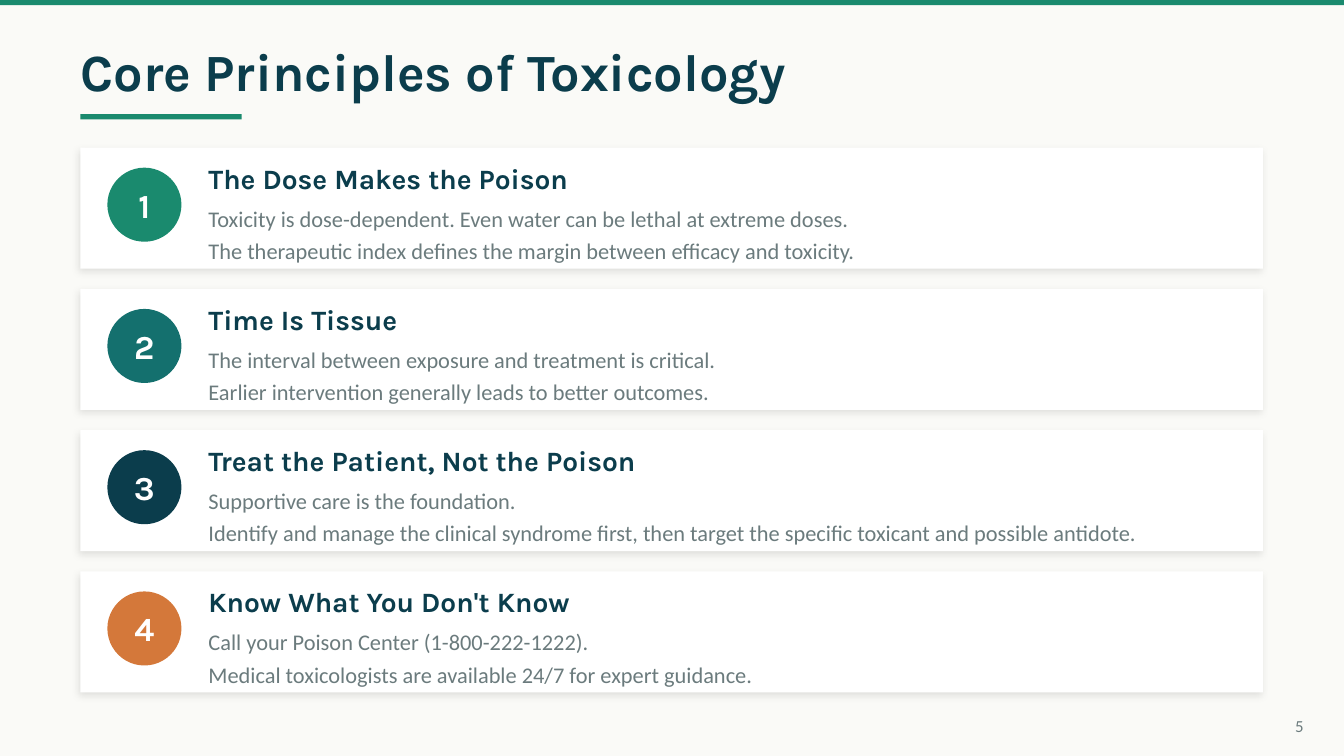
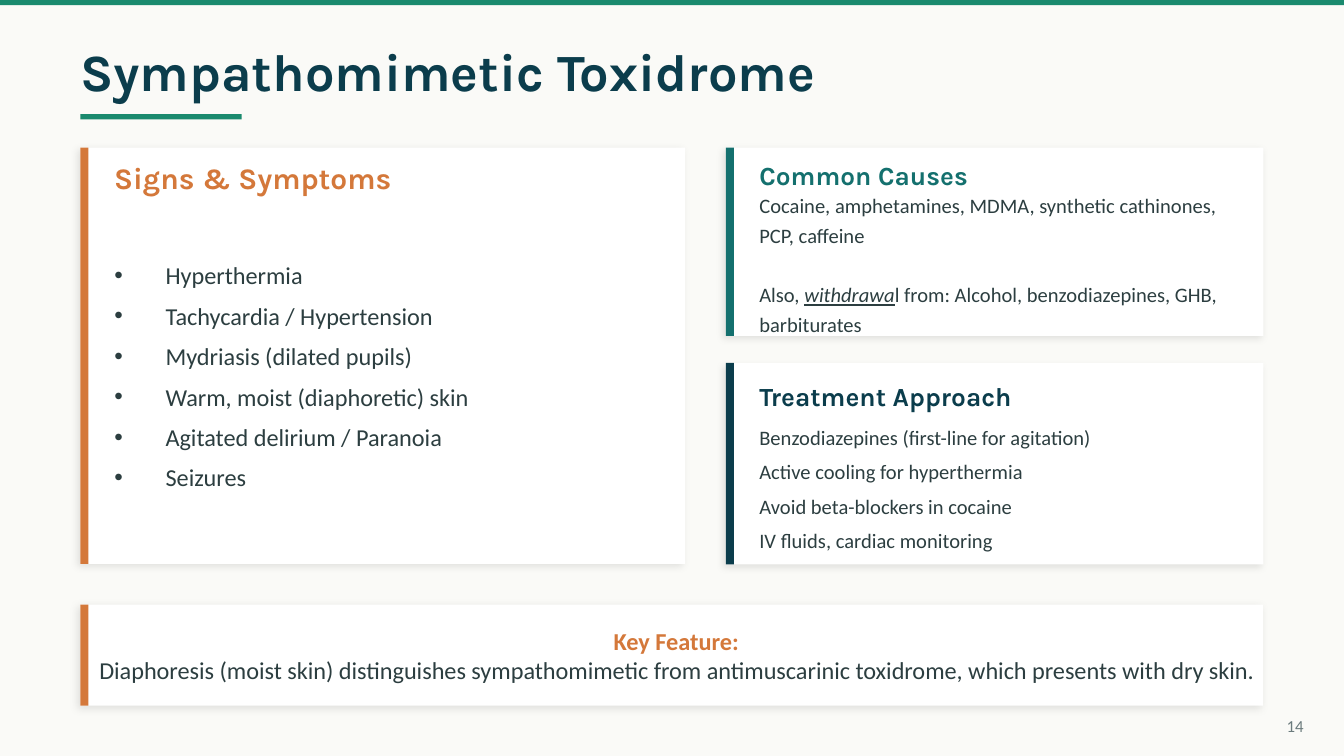
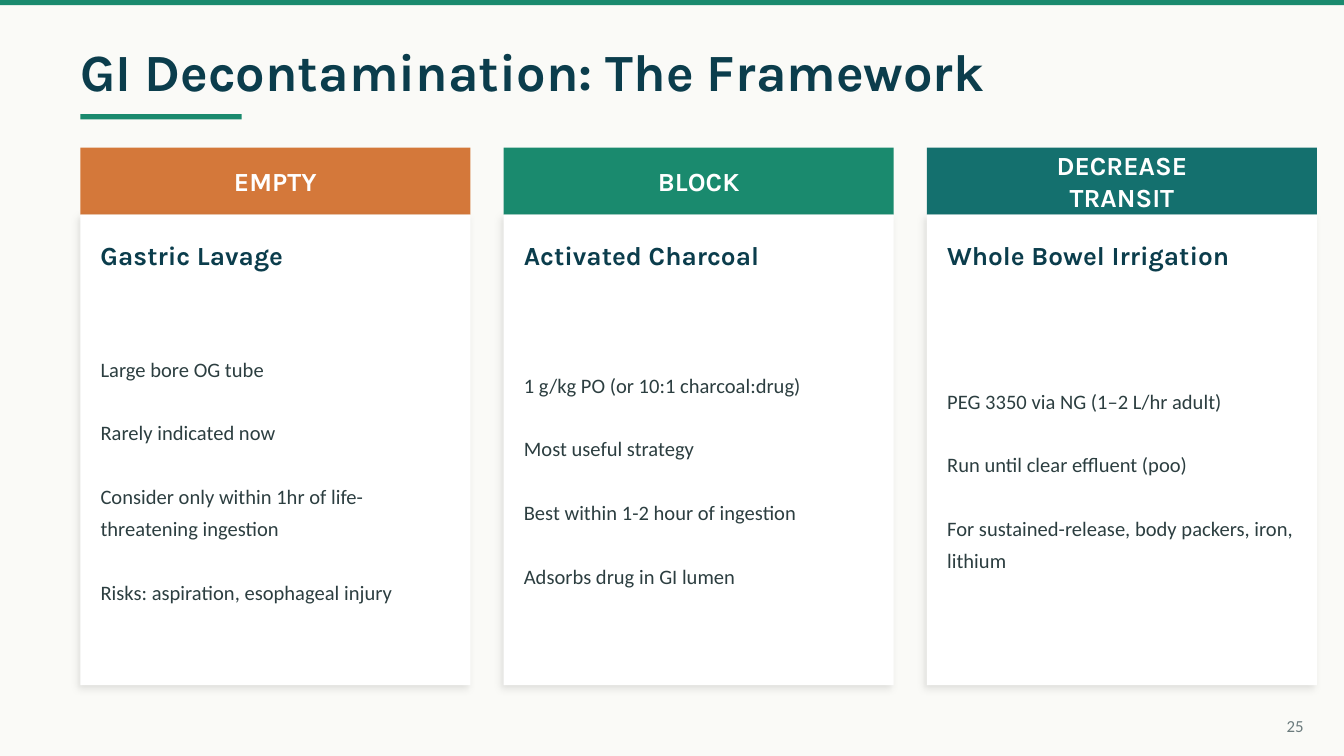
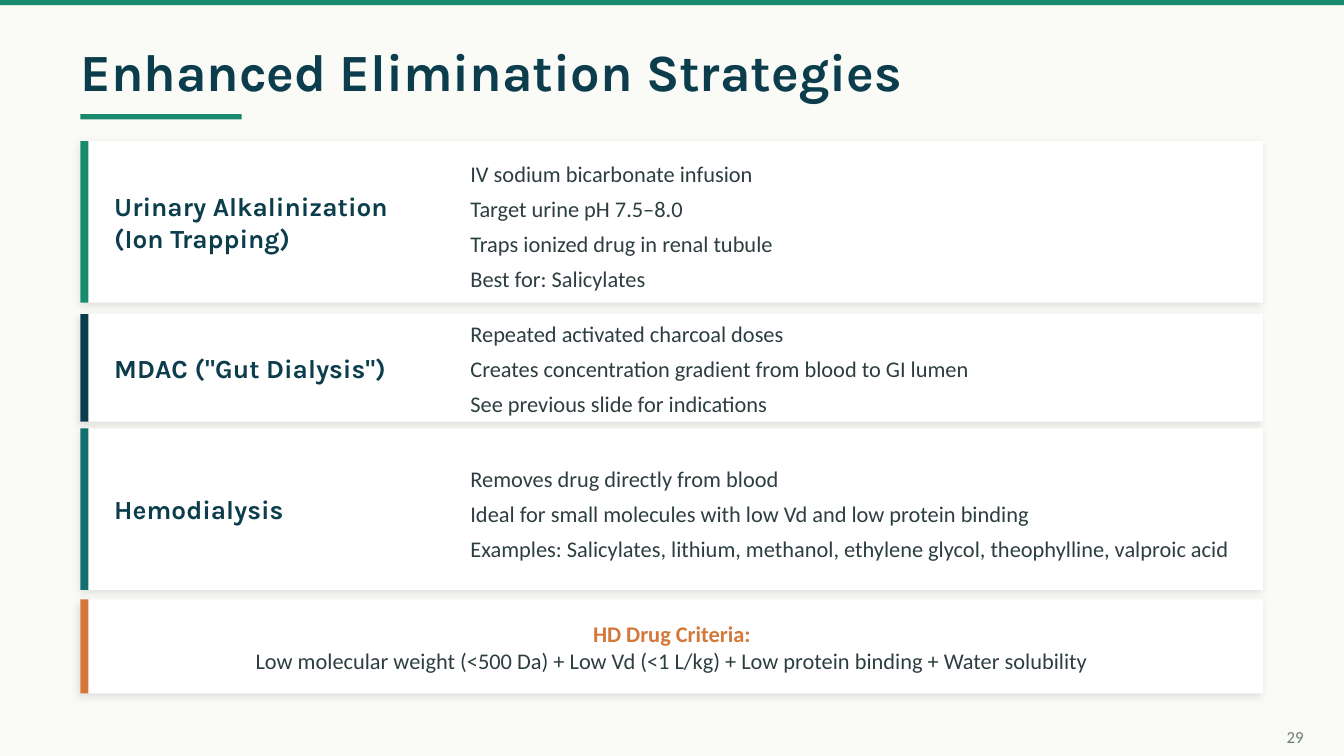
import pptx
import pptx.dml.color
import pptx.enum.shapes
import pptx.enum.text
import pptx.oxml.ns
import pptx.util
from lxml import etree

Cm = pptx.util.Cm
Pt = pptx.util.Pt
RGBColor = pptx.dml.color.RGBColor
Shape = pptx.enum.shapes.MSO_SHAPE
Align = pptx.enum.text.PP_ALIGN
qn = pptx.oxml.ns.qn

# Shared style; lengths are in centimetres, text sizes in points
CREAM = RGBColor(0xFA, 0xFA, 0xF7)
WHITE = RGBColor(0xFF, 0xFF, 0xFF)
GREEN = RGBColor(0x1A, 0x8A, 0x6E)
TEAL = RGBColor(0x14, 0x70, 0x6E)
NAVY = RGBColor(0x0B, 0x3D, 0x4C)
ORANGE = RGBColor(0xD4, 0x78, 0x3A)
INK = RGBColor(0x2C, 0x3E, 0x40)
GRAY = RGBColor(0x6B, 0x7B, 0x7D)
HEADING_FONT = "Karla"
BODY_FONT = "Calibri"
SLIDE_WIDTH, SLIDE_HEIGHT = 25.4, 14.29
MARGIN = 1.52
CONTENT_WIDTH = 22.35
CONTENT_TOP = 2.79
ACCENT_WIDTH = 0.15
COMPARISON_LAYOUT = 4  # a title and four body placeholders


# Text
def set_bullet(paragraph, bullet):
    properties = paragraph._p.get_or_add_pPr()
    indent = Cm(0.97) if bullet else 0
    properties.set("marL", str(indent))
    properties.set("indent", str(-indent))
    if bullet:
        etree.SubElement(properties, qn("a:buChar")).set("char", "•")
    else:
        etree.SubElement(properties, qn("a:buNone"))


def write_text(shape, paragraphs, size, color, font=BODY_FONT, bold=False,
               align=Align.LEFT, line=1.0, before=0, after=0, bullet=False):
    """Fill a shape; a paragraph is a string or a list of (text, emphasized) runs."""
    frame = shape.text_frame
    frame.word_wrap = True
    frame.auto_size = pptx.enum.text.MSO_AUTO_SIZE.NONE
    frame.vertical_anchor = pptx.enum.text.MSO_ANCHOR.MIDDLE
    frame.margin_left = frame.margin_right = frame.margin_top = frame.margin_bottom = 0
    for index, content in enumerate(paragraphs):
        paragraph = frame.add_paragraph() if index else frame.paragraphs[0]
        runs = [(content, False)] if isinstance(content, str) else content
        for text, emphasized in runs:
            run = paragraph.add_run()
            run.text = text
            if emphasized:
                run.font.italic = run.font.underline = True
        paragraph.alignment = align
        paragraph.line_spacing = line
        paragraph.space_before = Pt(before if index else 0)
        paragraph.space_after = Pt(after)
        set_bullet(paragraph, bullet)
        paragraph.font.name = font
        paragraph.font.size = Pt(size)
        paragraph.font.bold = bold
        paragraph.font.color.rgb = color


def place(shape, left, top, width, height):
    shape.left, shape.top = Cm(left), Cm(top)
    shape.width, shape.height = Cm(width), Cm(height)


def add_text(slide, left, top, width, height, paragraphs, size, color, **style):
    box = slide.shapes.add_textbox(Cm(left), Cm(top), Cm(width), Cm(height))
    write_text(box, paragraphs, size, color, **style)
    return box


def add_heading(slide, left, top, width, height, paragraphs, size, color=NAVY):
    add_text(slide, left, top, width, height, paragraphs, size, color,
             font=HEADING_FONT, bold=True)


def add_list(slide, number, left, top, width, height, items, size, color=INK, **style):
    """Use body placeholder 1 to 4 and bring it in front of its card."""
    body = slide.placeholders[number]
    place(body, left, top, width, height)
    write_text(body, items, size, color, **style)
    body.element.getparent().append(body.element)


# Shapes
def add_block(slide, kind, left, top, width, height, color):
    block = slide.shapes.add_shape(kind, Cm(left), Cm(top), Cm(width), Cm(height))
    block.shadow.inherit = False
    block.fill.solid()
    block.fill.fore_color.rgb = color
    block.line.fill.background()
    return block


def add_label(slide, kind, left, top, width, height, color, paragraphs, size):
    label = add_block(slide, kind, left, top, width, height, color)
    write_text(label, paragraphs, size, WHITE, font=HEADING_FONT, bold=True,
               align=Align.CENTER)


def add_card(slide, left, top, width, height, accent=None):
    card = add_block(slide, Shape.RECTANGLE, left, top, width, height, WHITE)
    effects = card.element.spPr.find(qn("a:effectLst"))
    shadow = etree.SubElement(effects, qn("a:outerShdw"), blurRad=str(Pt(4)),
                              dist=str(Pt(2)), dir=str(135 * 60000),
                              algn="bl", rotWithShape="0")
    black = etree.SubElement(shadow, qn("a:srgbClr"), val="000000")
    etree.SubElement(black, qn("a:alpha"), val="10000")
    if accent:
        add_block(slide, Shape.RECTANGLE, left, top, ACCENT_WIDTH, height, accent)


def add_callout(slide, top, height, text_area, lead, sentence, size):
    add_card(slide, MARGIN, top, CONTENT_WIDTH, height, ORANGE)
    box = add_text(slide, *text_area, [lead, sentence], size, INK, align=Align.CENTER)
    lead_font = box.text_frame.paragraphs[0].font
    lead_font.bold = True
    lead_font.color.rgb = ORANGE


# Frame that every slide shares
def add_slide(presentation, title, page, list_count, page_top=13.34):
    slide = presentation.slides.add_slide(presentation.slide_layouts[COMPARISON_LAYOUT])
    for placeholder in list(slide.placeholders):
        if placeholder.placeholder_format.idx > list_count:
            placeholder.element.getparent().remove(placeholder.element)
    add_block(slide, Shape.RECTANGLE, 0, 0, SLIDE_WIDTH, 0.1, GREEN)
    place(slide.shapes.title, MARGIN, 0.64, CONTENT_WIDTH, 1.4)
    write_text(slide.shapes.title, [title], 28, NAVY, font=HEADING_FONT, bold=True)
    add_block(slide, Shape.RECTANGLE, MARGIN, 2.16, 3.05, 0.1, GREEN)
    add_text(slide, 23.37, page_top, 1.27, 0.76, [str(page)], 9, GRAY, align=Align.RIGHT)
    return slide


# Slides
def build_principles(presentation):
    principles = [
        (GREEN, "The Dose Makes the Poison",
         ["Toxicity is dose-dependent. Even water can be lethal at extreme doses.",
          "The therapeutic index defines the margin between efficacy and toxicity."]),
        (TEAL, "Time Is Tissue",
         ["The interval between exposure and treatment is critical.",
          "Earlier intervention generally leads to better outcomes."]),
        (NAVY, "Treat the Patient, Not the Poison",
         ["Supportive care is the foundation.",
          "Identify and manage the clinical syndrome first, then target the specific "
          "toxicant and possible antidote."]),
        (ORANGE, "Know What You Don't Know",
         ["Call your Poison Center (1-800-222-1222).",
          "Medical toxicologists are available 24/7 for expert guidance."]),
    ]
    slide = add_slide(presentation, "Core Principles of Toxicology", 5, len(principles))
    for number, (color, heading, details) in enumerate(principles, 1):
        top = CONTENT_TOP + (number - 1) * 2.67
        add_card(slide, MARGIN, top, CONTENT_WIDTH, 2.29)
        add_label(slide, Shape.OVAL, 2.03, top + 0.38, 1.4, 1.4, color, [str(number)], 18)
        add_heading(slide, 3.94, top + 0.13, 19.05, 0.89, [heading], 15)
        add_list(slide, number, 3.94, top + 1.02, 19.05, 1.14, details, 12, GRAY, line=1.2)


def build_toxidrome(presentation):
    slide = add_slide(presentation, "Sympathomimetic Toxidrome", 14, 3)

    # Signs on the left
    add_card(slide, MARGIN, CONTENT_TOP, 11.43, 7.87, ORANGE)
    add_heading(slide, 2.16, 2.92, 10.16, 0.89, ["Signs & Symptoms"], 16, ORANGE)
    signs = ["Hyperthermia", "Tachycardia / Hypertension", "Mydriasis (dilated pupils)",
             "Warm, moist (diaphoretic) skin", "Agitated delirium / Paranoia", "Seizures"]
    add_list(slide, 1, 2.16, 4.19, 10.16, 5.84, signs, 13, after=6, bullet=True)

    # Causes and treatment on the right
    right, text_left, text_width = 13.72, 14.35, 8.89
    add_card(slide, right, CONTENT_TOP, 10.16, 3.56, TEAL)
    add_heading(slide, text_left, 2.92, text_width, 0.76, ["Common Causes"], 14, TEAL)
    causes = ["Cocaine, amphetamines, MDMA, synthetic cathinones, PCP, caffeine",
              [("Also, ", False), ("withdrawa", True),
               ("l from: Alcohol, benzodiazepines, GHB, barbiturates", False)]]
    add_list(slide, 2, text_left, 3.94, text_width, 2.03, causes, 11, line=1.2, before=16)

    add_card(slide, right, 6.86, 10.16, 3.81, NAVY)
    add_heading(slide, text_left, 7.11, text_width, 0.76, ["Treatment Approach"], 14)
    treatments = ["Benzodiazepines (first-line for agitation)",
                  "Active cooling for hyperthermia",
                  "Avoid beta-blockers in cocaine",
                  "IV fluids, cardiac monitoring"]
    add_list(slide, 3, text_left, 8, text_width, 2.29, treatments, 11, line=1.4)

    add_callout(slide, 11.43, 1.91, (1.68, 11.56, 22.2, 1.65), "Key Feature:",
                "Diaphoresis (moist skin) distinguishes sympathomimetic from "
                "antimuscarinic toxidrome, which presents with dry skin.", 13)


def build_decontamination(presentation):
    strategies = [
        (ORANGE, ["EMPTY"], "Gastric Lavage",
         ["Large bore OG tube", "Rarely indicated now",
          "Consider only within 1hr of life-threatening ingestion",
          "Risks: aspiration, esophageal injury"]),
        (GREEN, ["BLOCK"], "Activated Charcoal",
         ["1 g/kg PO (or 10:1 charcoal:drug)", "Most useful strategy",
          "Best within 1-2 hour of ingestion", "Adsorbs drug in GI lumen"]),
        (TEAL, ["DECREASE", "TRANSIT"], "Whole Bowel Irrigation",
         ["PEG 3350 via NG (1–2 L/hr adult)", "Run until clear effluent (poo)",
          "For sustained-release, body packers, iron, lithium"]),
    ]
    slide = add_slide(presentation, "GI Decontamination: The Framework", 25,
                      len(strategies))
    for number, (color, goal, method, notes) in enumerate(strategies, 1):
        left = MARGIN + (number - 1) * 8
        text_left = left + 0.38
        add_label(slide, Shape.RECTANGLE, left, CONTENT_TOP, 7.37, 1.27, color, goal, 14)
        add_card(slide, left, 4.06, 7.37, 8.89)
        add_heading(slide, text_left, 4.32, 6.6, 1.02, [method], 14)
        add_list(slide, number, text_left, 5.46, 6.6, 7.11, notes, 11, line=1.3, before=17)


def build_elimination(presentation):
    # Card top and height, then list top and height
    strategies = [
        (GREEN, 2.67, 3.05, 2.92, 2.54, ["Urinary Alkalinization", "(Ion Trapping)"],
         ["IV sodium bicarbonate infusion", "Target urine pH 7.5–8.0",
          "Traps ionized drug in renal tubule", "Best for: Salicylates"]),
        (NAVY, 5.94, 2.03, 5.94, 1.91, ["MDAC (\"Gut Dialysis\")"],
         ["Repeated activated charcoal doses",
          "Creates concentration gradient from blood to GI lumen",
          "See previous slide for indications"]),
        (TEAL, 8.1, 3.05, 8.36, 2.54, ["Hemodialysis"],
         ["Removes drug directly from blood",
          "Ideal for small molecules with low Vd and low protein binding",
          "Examples: Salicylates, lithium, methanol, ethylene glycol, theophylline, "
          "valproic acid"]),
    ]
    slide = add_slide(presentation, "Enhanced Elimination Strategies", 29,
                      len(strategies), page_top=13.54)
    for number, strategy in enumerate(strategies, 1):
        color, top, height, list_top, list_height, name, facts = strategy
        add_card(slide, MARGIN, top, CONTENT_WIDTH, height, color)
        add_heading(slide, 2.16, top + 0.25, 6.35, height - 0.5, name, 14)
        add_list(slide, number, 8.89, list_top, 14.48, list_height, facts, 12, line=1.3)
    add_callout(slide, 11.33, 1.78, (2.16, 11.4, 21.08, 1.65), "HD Drug Criteria:",
                "Low molecular weight (<500 Da) + Low Vd (<1 L/kg) + "
                "Low protein binding + Water solubility", 12)


def main():
    presentation = pptx.Presentation()
    presentation.slide_width = Cm(SLIDE_WIDTH)
    presentation.slide_height = Cm(SLIDE_HEIGHT)
    background = presentation.slide_master.background.fill
    background.solid()
    background.fore_color.rgb = CREAM
    build_principles(presentation)
    build_toxidrome(presentation)
    build_decontamination(presentation)
    build_elimination(presentation)
    presentation.save("out.pptx")


if __name__ == "__main__":
    main()
